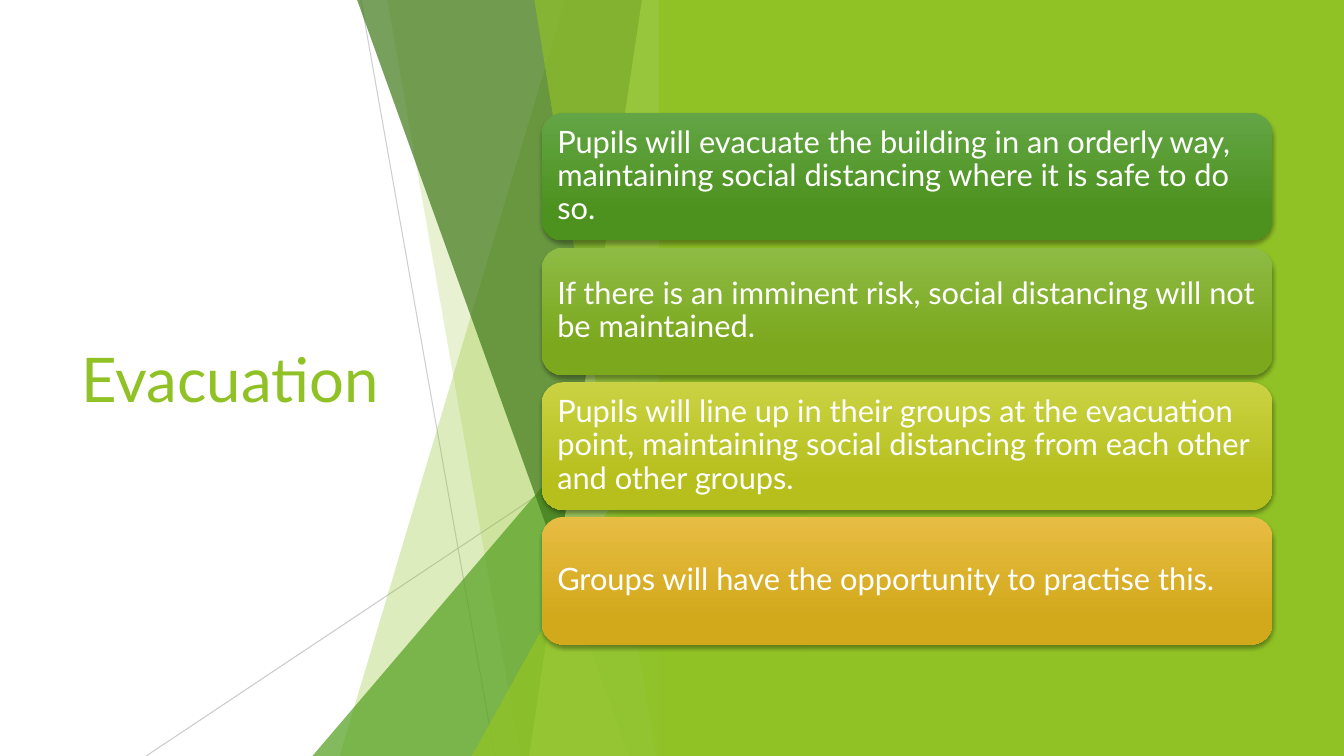
"""Build the Evacuation slide: a title, green facets and four cards."""
from lxml import etree
from pptx import Presentation
from pptx import util as u
from pptx.dml.color import RGBColor
from pptx.enum import shapes, text
from pptx.oxml import ns

LIME = RGBColor(0x90, 0xC2, 0x26)
GREEN = RGBColor(0x54, 0xA0, 0x21)
DARK = RGBColor(0x3F, 0x78, 0x19)
PALE = RGBColor(0xC0, 0xE4, 0x74)
GREY = RGBColor(0xBF, 0xBF, 0xBF)
WHITE = RGBColor(0xFF, 0xFF, 0xFF)
BLACK = RGBColor(0, 0, 0)
WIDE, HIGH = 960, 540
EDGE = 479.5

CARDS = [
    ("Pupils will evacuate the building in an orderly way, maintaining "
     "social distancing where it is safe to do so.",
     RGBColor(0x63, 0xA5, 0x45), RGBColor(0x4D, 0x92, 0x1E)),
    ("If there is an imminent risk, social distancing will not be maintained.",
     RGBColor(0x8E, 0xBB, 0x44), RGBColor(0x7B, 0xA8, 0x1D)),
    ("Pupils will line up in their groups at the evacuation point, "
     "maintaining social distancing from each other and other groups.",
     RGBColor(0xCA, 0xD2, 0x43), RGBColor(0xB6, 0xBF, 0x1B)),
    ("Groups will have the opportunity to practise this.",
     RGBColor(0xE7, 0xBC, 0x43), RGBColor(0xD2, 0xA9, 0x1B)),
]


class Deck:
    def __init__(self, slide, face="Lato"):
        self.slide = slide
        self.items = slide.shapes
        self.face = face

    def add(self, parent, tag, **attrs):
        return etree.SubElement(parent, ns.qn(tag),
                                {k: str(v) for k, v in attrs.items()})

    def fade(self, item, alpha):
        color = item.element.spPr.find(".//" + ns.qn("a:srgbClr"))
        self.add(color, "a:alpha", val=alpha * 1000)

    def paint(self, item, color, alpha=100):
        item.shadow.inherit = False
        item.line.fill.background()
        item.fill.solid()
        item.fill.fore_color.rgb = color
        if alpha < 100:
            self.fade(item, alpha)

    def style(self, para, size, color):
        para.alignment = text.PP_ALIGN.LEFT
        para.font.name = self.face
        para.font.size = u.Pt(size)
        para.font.color.rgb = color

    def title(self, words, left, top, width, height):
        box = self.items.title
        box.left, box.top = u.Pt(left), u.Pt(top)
        box.width, box.height = u.Pt(width), u.Pt(height)
        frame = box.text_frame
        frame.text = words
        frame.word_wrap = True
        frame.auto_size = text.MSO_AUTO_SIZE.NONE
        frame.vertical_anchor = text.MSO_ANCHOR.MIDDLE
        self.style(frame.paragraphs[0], 44, LIME)

    def line(self, start, end, alpha):
        line = self.items.add_connector(
            shapes.MSO_CONNECTOR.STRAIGHT, *map(u.Pt, start + end))
        line.line.width = u.Pt(0.75)
        line.line.color.rgb = GREY
        self.fade(line, alpha)
        self.add(line.element.spPr, "a:effectLst")

    def facet(self, top, base, color, alpha):
        points = [(u.Pt(x), u.Pt(y)) for x, y in (
            (top, -0.6), (EDGE, -0.6), (EDGE, HIGH), (base, HIGH))]
        pen = self.items.build_freeform(*points[0])
        pen.add_line_segments(points[1:], close=True)
        self.paint(pen.convert_to_shape(), color, alpha)

    def shape(self, kind, left, top, width, height):
        return self.items.add_shape(
            kind, *map(u.Pt, (left, top, width, height)))

    def wedge(self, left, top, color, alpha):
        item = self.shape(shapes.MSO_SHAPE.ISOSCELES_TRIANGLE,
                          left, top, EDGE - left, HIGH - top)
        item.adjustments[0] = 1
        self.paint(item, color, alpha)

    def panel(self, left, color):
        item = self.shape(shapes.MSO_SHAPE.RECTANGLE,
                          left, 0, WIDE - left, HIGH)
        self.paint(item, color)

    def card(self, top, words, light, deep):
        item = self.shape(shapes.MSO_SHAPE.ROUNDED_RECTANGLE,
                          387, top, 522, 91.2)
        item.line.fill.background()
        item.fill.gradient()
        item.fill.gradient_angle = 270
        for stop, place, color in zip(
                item.fill.gradient_stops, (0, 0.78), (light, deep)):
            stop.position = place
            stop.color.rgb = color
        self.shade(item)
        frame = item.text_frame
        frame.word_wrap = True
        frame.vertical_anchor = text.MSO_ANCHOR.MIDDLE
        frame.margin_left = frame.margin_right = u.Pt(6.6)
        frame.margin_top = frame.margin_bottom = u.Pt(6.6)
        frame.text = words
        para = frame.paragraphs[0]
        para.line_spacing = 0.9
        self.style(para, 22, WHITE)

    def shade(self, item):
        item.shadow.inherit = False
        glow = item.element.spPr.find(ns.qn("a:effectLst"))
        cast = self.add(glow, "a:outerShdw", blurRad=u.Pt(3), dist=u.Pt(2),
                        dir=5400000, rotWithShape=0)
        color = self.add(cast, "a:srgbClr", val=BLACK)
        self.add(color, "a:alpha", val=35000)


def main():
    show = Presentation()
    show.slide_width, show.slide_height = u.Pt(WIDE), u.Pt(HIGH)
    deck = Deck(show.slides.add_slide(show.slide_layouts[5]))
    deck.title("Evacuation", 51, 108.7, 279.4, 322.6)
    deck.line((257.8, 0), (353.5, HIGH), 75)
    deck.line((EDGE, 290.2), (104.4, HIGH), 80)
    deck.facet(403.9, 242.6, LIME, 30)
    deck.facet(276.5, 371.5, LIME, 20)
    deck.wedge(223.2, 239.8, GREEN, 72)
    deck.facet(254.9, 449.3, DARK, 70)
    deck.facet(458.6, 378, PALE, 70)
    deck.facet(381.6, 468.7, LIME, 65)
    deck.wedge(337, 283, LIME, 80)
    deck.panel(470.6, LIME)
    for row, card in enumerate(CARDS):
        deck.card(80.6 + 96.2 * row, *card)
    show.save("out.pptx")


if __name__ == "__main__":
    main()
